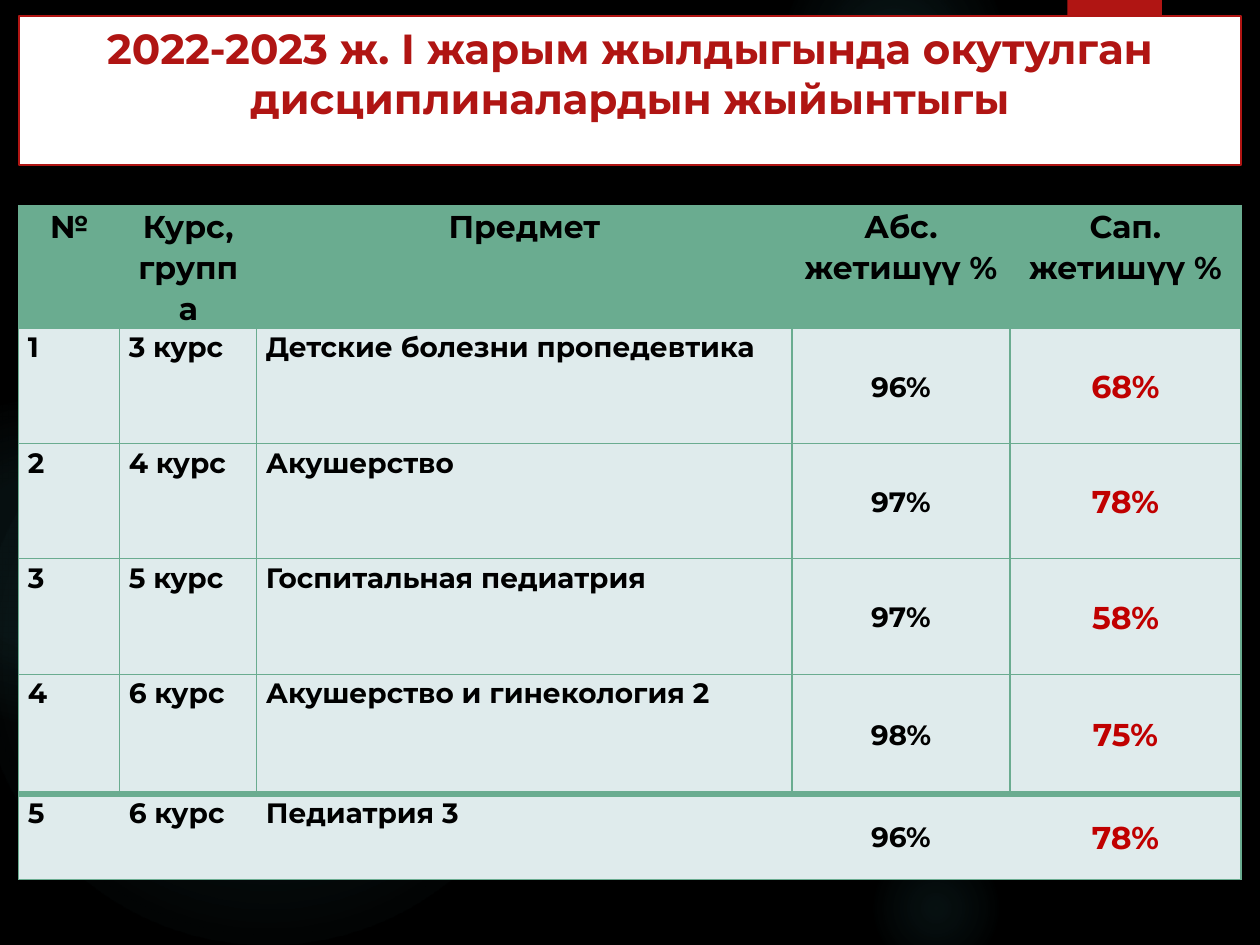
import pptx
import pptx.util
import pptx.oxml
import pptx.dml.color
import pptx.enum.shapes
import pptx.enum.text

Pt = pptx.util.Pt
ALIGN = pptx.enum.text.PP_ALIGN
ANCHOR = pptx.enum.text.MSO_ANCHOR
SHAPE = pptx.enum.shapes.MSO_SHAPE
XMLNS = 'xmlns:a="http://schemas.openxmlformats.org/drawingml/2006/main"'
RED, GREEN, PALE, GLOW = "B01513", "6AAC90", "DFEBEC", "50B9C1"


def color(value):
    return pptx.dml.color.RGBColor.from_string(value)


def style(paragraph, size, ink, align):
    paragraph.alignment = align
    for run in paragraph.runs:
        run.font.name = "Montserrat"
        run.font.size = Pt(size)
        run.font.bold = True
        run.font.color.rgb = color(ink)


deck = pptx.Presentation()
deck.slide_width, deck.slide_height = Pt(720), Pt(540)
slide = deck.slides.add_slide(deck.slide_layouts[6])
slide.background.fill.solid()
slide.background.fill.fore_color.rgb = color("000000")

# Background glows: left, top, diameter, (position %, opacity %) stops
glows = [
    (496, 132, 222, [(0, 7), (36, 6), (69, 0)]),
    (448, -36, 126, [(0, 14), (36, 7), (73, 0)]),
    (496, 480, 78, [(0, 9), (36, 5), (66, 0)]),
    (-12, 210, 330, [(0, 11), (36, 10), (75, 0)]),
    (-66, 228, 186, [(0, 8), (36, 8), (72, 0)]),
]
for left, top, diameter, stops in glows:
    glow = slide.shapes.add_shape(SHAPE.OVAL, Pt(left), Pt(top), Pt(diameter), Pt(diameter))
    glow.shadow.inherit = False
    glow.line.fill.background()
    stop_xml = "".join(
        f'<a:gs pos="{position * 1000}"><a:srgbClr val="{GLOW}">'
        f'<a:alpha val="{opacity * 1000}"/></a:srgbClr></a:gs>'
        for position, opacity in stops)
    gradient = pptx.oxml.parse_xml(
        f'<a:gradFill {XMLNS}><a:gsLst>{stop_xml}</a:gsLst><a:path path="circle">'
        '<a:fillToRect l="50000" t="50000" r="50000" b="50000"/></a:path></a:gradFill>')
    glow._element.spPr.insert(2, gradient)

# Red tab behind the title
tab = slide.shapes.add_shape(SHAPE.RECTANGLE, Pt(610), Pt(0), Pt(54), Pt(86.4))
tab.shadow.inherit = False
tab.fill.solid()
tab.fill.fore_color.rgb = color(RED)
tab.line.fill.background()

# Title
title = slide.shapes.add_textbox(Pt(10.8), Pt(9.2), Pt(698.4), Pt(85))
title.fill.solid()
title.fill.fore_color.rgb = color("FFFFFF")
title.line.color.rgb = color(RED)
title.line.width = Pt(1.5)
title.text_frame.word_wrap = True
title.text_frame.text = "2022-2023 ж. I жарым жылдыгында окутулган дисциплиналардын жыйынтыгы"
style(title.text_frame.paragraphs[0], 24, RED, ALIGN.CENTER)

# Results table
results = [
    ("№", "Курс, группа", "Предмет", "Абс. жетишүү %", "Сап. жетишүү %"),
    ("1", "3 курс", "Детские болезни пропедевтика", "96%", "68%"),
    ("2", "4 курс", "Акушерство", "97%", "78%"),
    ("3", "5 курс", "Госпитальная педиатрия", "97%", "58%"),
    ("4", "6 курс", "Акушерство и гинекология 2", "98%", "75%"),
    ("5", "6 курс", "Педиатрия 3", "96%", "78%"),
]
widths = [57.6, 78.4, 305.8, 124.6, 132]
heights = [70.2, 65.9, 65.9, 65.9, 68.4, 49]
last_row, last_column = len(heights) - 1, len(widths) - 1
table = slide.shapes.add_table(len(heights), len(widths), Pt(10.8), Pt(117.4),
                               Pt(sum(widths)), Pt(sum(heights))).table
table.horz_banding = False
for column, width in zip(table.columns, widths):
    column.width = Pt(width)

for r, (height, texts) in enumerate(zip(heights, results)):
    table.rows[r].height = Pt(height)
    for c, text in enumerate(texts):
        cell = table.cell(r, c)
        cell.margin_left = cell.margin_right = Pt(5.2)
        cell.margin_top = cell.margin_bottom = Pt(0)
        is_header, is_percent = r == 0, c >= 3
        cell.vertical_anchor = ANCHOR.MIDDLE if is_percent and not is_header else ANCHOR.TOP

        # Text
        cell.text_frame.text = text
        paragraph = cell.text_frame.paragraphs[0]
        paragraph.line_spacing = 1.07
        style(paragraph,
              18 if is_header or c == last_column else 16,
              "C00000" if c == last_column and not is_header else "000000",
              ALIGN.CENTER if is_header or is_percent else ALIGN.LEFT)

        # Borders: heavy rule above the last row, no inner verticals in it
        borders = {
            "L": 0 if r == last_row and c > 0 else 0.75,
            "R": 0 if r == last_row and c < last_column else 0.75,
            "T": 4 if r == last_row else 0.75,
            "B": 4 if r == last_row - 1 else 0.75,
        }
        for side, weight in borders.items():
            paint = (f'<a:solidFill><a:srgbClr val="{GREEN}"/></a:solidFill>'
                     if weight else "<a:noFill/>")
            cell._tc.get_or_add_tcPr().append(pptx.oxml.parse_xml(
                f'<a:ln{side} {XMLNS} w="{int(Pt(weight))}">{paint}</a:ln{side}>'))
        cell.fill.solid()
        cell.fill.fore_color.rgb = color(GREEN if is_header else PALE)

deck.save("out.pptx")
